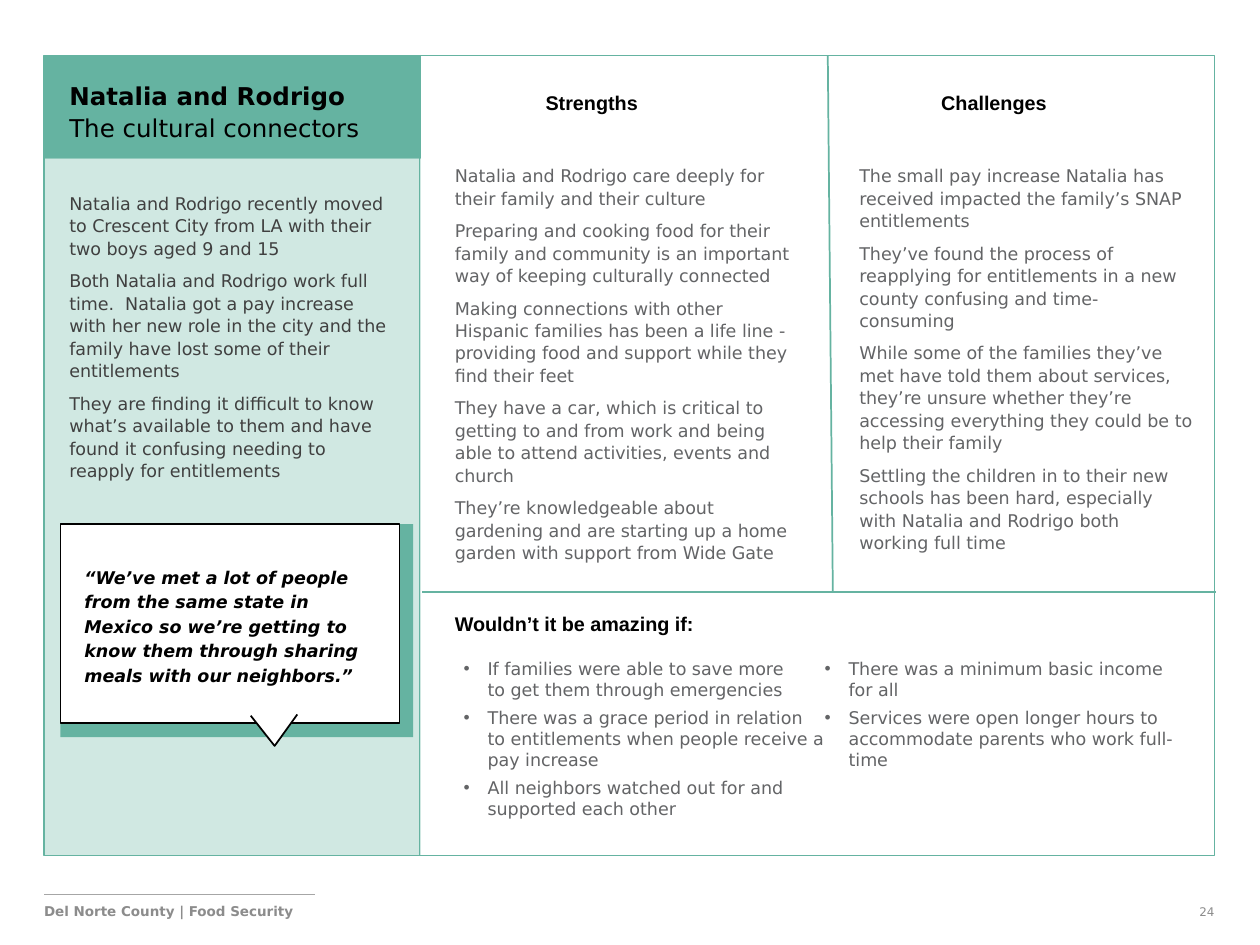
import pptx
import pptx.util
import pptx.dml.color
import pptx.enum.shapes
import pptx.enum.text
import pptx.oxml
import pptx.oxml.ns
from lxml import etree

Pt = pptx.util.Pt
RGB = pptx.dml.color.RGBColor.from_string
RECT = pptx.enum.shapes.MSO_SHAPE.RECTANGLE
ALIGN = pptx.enum.text.PP_ALIGN
qn = pptx.oxml.ns.qn

THEME = dict(
    green="65B3A1", white="FFFFFF", black="000000", story="404040",
    body="636466", footer="8C8C8C", rule="A6A6A6",
    sans="DejaVu Sans", head="Arial",
    title_pt=14, head_pt=11.3, body_pt=10, footer_pt=7.7, number_pt=6.8,
)

prs = pptx.Presentation()
prs.slide_width, prs.slide_height = pptx.util.Inches(10), pptx.util.Inches(7.5)
COL, ROW = prs.slide_width / 100, prs.slide_height / 75  # grid of 100 x 75
s = prs.slides.add_slide(prs.slide_layouts.get_by_name("Comparison"))
title, story, strengths, challenges, wishes = s.placeholders


def place(x1, y1, x2, y2):
    """Turn two grid points, or a corner and a size, into lengths."""
    return [round(v * unit) for v, unit in zip((x1, y1, x2, y2), (COL, ROW) * 2)]


def write(sp, box, paragraphs, size, color, font="sans", bold=False, italic=False,
          insets=(0.3, 0.3, 0.3, 0.3), spacing=1.07, before=0, bullet=None,
          align=ALIGN.LEFT, wrap=True):
    """Fill a text box or placeholder and bring it to the front."""
    sp.left, sp.top, sp.width, sp.height = place(*box)
    s.shapes.element.append(sp.element)
    tf = sp.text_frame
    tf.text = "\n".join(paragraphs)
    tf.word_wrap = wrap
    tf.auto_size = pptx.enum.text.MSO_AUTO_SIZE.NONE
    tf.vertical_anchor = pptx.enum.text.MSO_ANCHOR.TOP
    tf.margin_left, tf.margin_top, tf.margin_right, tf.margin_bottom = place(*insets)
    for i, p in enumerate(tf.paragraphs):
        p.alignment, p.line_spacing = align, spacing
        p.space_before, p.space_after = Pt(before if i else 0), Pt(0)
        pPr = p._p.get_or_add_pPr()
        indent = round(1.9 * COL) if bullet else 0
        pPr.set("marL", str(indent))
        pPr.set("indent", str(-indent))
        if bullet:
            etree.SubElement(pPr, qn("a:buChar")).set("char", bullet)
        else:
            etree.SubElement(pPr, qn("a:buNone"))
        for r in p.runs:
            r.font.name, r.font.size = THEME[font], Pt(THEME[size])
            r.font.color.rgb = RGB(THEME[color])
            r.font.bold, r.font.italic = bold, italic


# Panels, outer frame, and the quote card with its offset backing
for box, fill, line in [
    ((3.5, 12.6, 29.9, 55.3), "green", None),
    ((3.5, 4.4, 29.9, 8.2), "green", None),
    ((3.5, 4.4, 92.9, 63.5), None, "green"),
    ((4.8, 41.6, 28, 16.9), "green", None),
    ((4.8, 41.6, 26.9, 15.8), "white", "black"),
]:
    sp = s.shapes.add_shape(RECT, *place(*box))
    sp.shadow.inherit = False
    if fill:
        sp.fill.solid()
        sp.fill.fore_color.rgb = RGB(THEME[fill])
    else:
        sp.fill.background()
    if line:
        sp.line.color.rgb, sp.line.width = RGB(THEME[line]), Pt(1)
    else:
        sp.line.fill.background()

# The story panel is a 30 % tint
tint = s.shapes[5].element.spPr.find(qn("a:solidFill")).find(qn("a:srgbClr"))
etree.SubElement(tint, qn("a:alpha")).set("val", "30000")

# Tail of the quote card
start, *points = [place(x, y, 0, 0)[:2] for x, y in [(19.9, 56.8), (21.8, 59.2), (23.6, 56.7)]]
builder = s.shapes.build_freeform(*start)
builder.add_line_segments(points, close=False)
tail = builder.convert_to_shape()
tail.shadow.inherit = False
tail.fill.solid()
tail.fill.fore_color.rgb = RGB(THEME["white"])
tail.line.color.rgb, tail.line.width = RGB(THEME["black"]), Pt(1)

# Dividers and footer rule
for ends, color, width in [
    ((65.7, 4.4, 66.1, 47), "green", 1),
    ((96.5, 47, 33.5, 47), "green", 1),
    ((33.3, 4.4, 33.3, 67.9), "green", 1),
    ((3.5, 71, 25, 71), "rule", 0.5),
]:
    ln = s.shapes.add_connector(pptx.enum.shapes.MSO_CONNECTOR.STRAIGHT, *place(*ends))
    ln.line.color.rgb, ln.line.width = RGB(THEME[color]), Pt(width)
    etree.SubElement(ln.element.spPr, qn("a:effectLst"))

# Title: bold name above a regular subtitle
write(title, (5.2, 6, 26.1, 5.3), ["Natalia and Rodrigo\vThe cultural connectors"],
      "title_pt", "black")
title.text_frame.paragraphs[0].runs[0].font.bold = True

# Story, strengths and challenges
for sp, box, color, paragraphs in [
    (story, (5.2, 14.9, 26.5, 24.5), "story", [
        "Natalia and Rodrigo recently moved to Crescent City from LA with their two boys aged 9 and 15",
        "Both Natalia and Rodrigo work full time.  Natalia got a pay increase with her new role in the city and the family have lost some of their entitlements",
        "They are finding it difficult to know what’s available to them and have found it confusing needing to reapply for entitlements",
    ]),
    (strengths, (35.8, 12.7, 28.1, 32.5), "body", [
        "Natalia and Rodrigo care deeply for their family and their culture",
        "Preparing and cooking food for their family and community is an important way of keeping culturally connected",
        "Making connections with other Hispanic families has been a life line - providing food and support while they find their feet",
        "They have a car, which is critical to getting to and from work and being able to attend activities, events and church",
        "They’re knowledgeable about gardening and are starting up a home garden with support from Wide Gate",
    ]),
    (challenges, (67.9, 12.7, 27.1, 31.7), "body", [
        "The small pay increase Natalia has received impacted the family’s SNAP entitlements",
        "They’ve found the process of reapplying for entitlements in a new county confusing and time-consuming",
        "While some of the families they’ve met have told them about services, they’re unsure whether they’re accessing everything they could be to help their family",
        "Settling the children in to their new schools has been hard, especially with Natalia and Rodrigo both working full time",
    ]),
]:
    write(sp, box, paragraphs, "body_pt", color, before=5.7)

# Wishes, bulleted in two columns
write(wishes, (35.8, 51.7, 59.3, 14.5), [
    "If families were able to save more\vto get them through emergencies",
    "There was a grace period in relation to entitlements when people receive a pay increase",
    "All neighbors watched out for and supported each other",
    "There was a minimum basic income for all",
    "Services were open longer hours to accommodate parents who work full-time",
], "body_pt", "body", insets=(1, 0.5, 1, 0.5), spacing=1.0, before=4, bullet="•")
wishes.text_frame._txBody.bodyPr.set("numCol", "2")

# Section headings, quote and footer
heading = dict(size="head_pt", color="black", font="head", bold=True, wrap=False)
footer = dict(color="footer", spacing=1.0)
for box, text, style in [
    ((43, 6.8, 7.9, 2.4), "Strengths", heading),
    ((74.4, 6.8, 8.9, 2.4), "Challenges", heading),
    ((35.8, 48.1, 19.6, 2.4), "Wouldn’t it be amazing if:", heading),
    ((6.4, 44.4, 23.8, 12.3),
     "“We’ve met a lot of people from the same state in Mexico so we’re getting to know them through sharing meals with our neighbors.”",
     dict(size="body_pt", color="black", bold=True, italic=True, spacing=Pt(14))),
    ((3.5, 71, 42.8, 2.8), "Del Norte County | Food Security",
     dict(footer, size="footer_pt", bold=True, insets=(0, 0.7, 0, 0))),
    ((75.3, 71, 21.1, 2.3), "24",
     dict(footer, size="number_pt", insets=(0, 0.8, 0, 0), align=ALIGN.RIGHT)),
]:
    write(s.shapes.add_textbox(*place(*box)), box, [text], **style)

prs.save("out.pptx")
